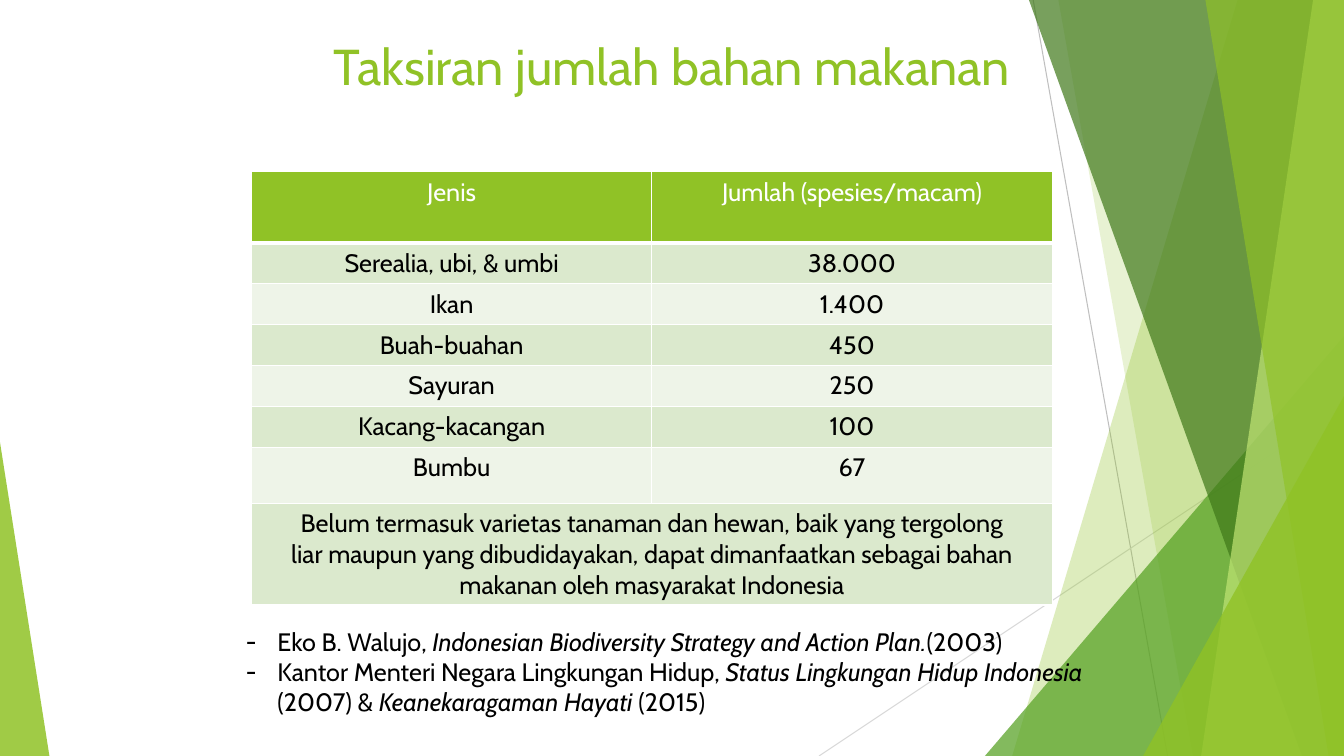
from lxml import etree
from pptx import Presentation
from pptx.dml.color import RGBColor as RGB
from pptx.enum.shapes import MSO_CONNECTOR as LINK, MSO_SHAPE as SHAPE
from pptx.enum.text import PP_ALIGN as ALIGN
from pptx.oxml.ns import qn
from pptx.util import Pt

FONT = "Cabin"
HUES = {
    "lime": "90C226", "green": "54A021", "dark": "3F7819", "pale": "C0E474",
    "gray": "BFBFBF", "mist": "D9D9D9", "white": "FFFFFF", "black": "000000",
    "band": "DBE9CD", "light": "EEF4E8",
}


def tint(shape, hue, alpha):
    """Fill a shape with a see-through colour, without line or shadow."""
    shape.shadow.inherit = False
    shape.line.fill.background()
    shape.fill.solid()
    shape.fill.fore_color.rgb = RGB.from_string(HUES[hue])
    clr = shape._element.spPr.find(qn("a:solidFill"))[0]
    etree.SubElement(clr, qn("a:alpha"), val=str(alpha * 1000))


def style(font, size, hue):
    font.name = FONT
    font.size = Pt(size)
    font.color.rgb = RGB.from_string(HUES[hue])


deck = Presentation()
deck.slide_width, deck.slide_height = Pt(960), Pt(540)
slide = deck.slides.add_slide(deck.slide_layouts[6])
shapes = slide.shapes

# Thin lines behind the facets
for hue, *ends in [("gray", 738, 0, 834, 540), ("mist", 960, 290, 585, 540)]:
    link = shapes.add_connector(LINK.STRAIGHT, *map(Pt, ends))
    link.line.color.rgb = RGB.from_string(HUES[hue])
    link.line.width = Pt(0.75)
    etree.SubElement(link._element.spPr, qn("a:effectLst"))

# Facets: top and bottom x of the slanted edge, or a triangle's
# left, top, width and apex; all reach the bottom of the slide
facets = [
    ("lime", 30, (884, 723)),
    ("lime", 20, (756, 852)),
    ("green", 72, (703.5, 240, 256.5, 1)),
    ("dark", 70, (735, 930)),
    ("pale", 70, (938, 858)),
    ("lime", 65, (861, 949)),
    ("lime", 80, (816.5, 283, 143.5, 1)),
    ("lime", 85, (0, 316, 35.3, 0)),
]
for hue, alpha, dims in facets:
    if len(dims) == 2:
        top, base = dims
        path = shapes.build_freeform(top, 0, scale=12700)
        path.add_line_segments([(960, 0), (960, 540), (base, 540)])
        facet = path.convert_to_shape()
    else:
        left, top, width, apex = dims
        facet = shapes.add_shape(SHAPE.ISOSCELES_TRIANGLE, Pt(left), Pt(top),
                                 Pt(width), Pt(540 - top))
        facet.adjustments[0] = apex
    tint(facet, hue, alpha)

# Title
title = shapes.add_textbox(Pt(120), Pt(21.6), Pt(720), Pt(90)).text_frame
title.word_wrap = True
title.text = "Taksiran jumlah bahan makanan"
title.paragraphs[0].alignment = ALIGN.CENTER
style(title.paragraphs[0].runs[0].font, 36, "lime")

# Table
rows = [
    ("Jenis", "Jumlah (spesies/macam)"),
    ("Serealia, ubi, & umbi", "38.000"),
    ("Ikan", "1.400"),
    ("Buah-buahan", "450"),
    ("Sayuran", "250"),
    ("Kacang-kacangan", "100"),
    ("Bumbu", "67"),
    ("Belum termasuk varietas tanaman dan hewan, baik yang tergolong\n"
     "liar maupun yang dibudidayakan, dapat dimanfaatkan sebagai bahan "
     "makanan oleh masyarakat Indonesia", ""),
]
highs = [50.8] + [29.2] * 5 + [39.9, 72.8]
table = shapes.add_table(len(rows), 2, Pt(179.6), Pt(122.7), Pt(572),
                         Pt(sum(highs))).table
for col in table.columns:
    col.width = Pt(286)
table.cell(7, 0).merge(table.cell(7, 1))
for r, (row, high) in enumerate(zip(rows, highs)):
    table.rows[r].height = Pt(high)
    hue = "lime" if r == 0 else "band" if r % 2 else "light"
    for c, text in enumerate(row):
        cell = table.cell(r, c)
        props = cell._tc.get_or_add_tcPr()
        for side in "LRTB":
            wide = 3 if r == 0 and side == "B" else 1
            edge = etree.SubElement(props, qn("a:ln" + side), w=str(Pt(wide)))
            fill = etree.SubElement(edge, qn("a:solidFill"))
            etree.SubElement(fill, qn("a:srgbClr"), val=HUES["white"])
        cell.fill.solid()
        cell.fill.fore_color.rgb = RGB.from_string(HUES[hue])
        if cell.is_spanned:
            continue
        cell.text_frame.text = text
        for para in cell.text_frame.paragraphs:
            para.alignment = ALIGN.CENTER
            style(para.runs[0].font, 18, "black" if r else "white")

# Sources: plain and italic runs take turns
notes = [
    ["Eko B. Walujo, ", "Indonesian Biodiversity Strategy and Action Plan.",
     "(2003)"],
    ["Kantor Menteri Negara Lingkungan Hidup, ",
     "Status Lingkungan Hidup Indonesia ", "(2007) & ",
     "Keanekaragaman Hayati ", "(2015)"],
]
frame = shapes.add_textbox(Pt(168.5), Pt(443.5), Pt(633), Pt(72.7)).text_frame
frame.word_wrap = True
for n, parts in enumerate(notes):
    para = frame.add_paragraph() if n else frame.paragraphs[0]
    props = para._p.get_or_add_pPr()
    props.set("marL", str(Pt(22.5)))
    props.set("indent", str(-Pt(22.5)))
    etree.SubElement(props, qn("a:buFont"), typeface=FONT)
    etree.SubElement(props, qn("a:buChar"), char="-")
    for i, part in enumerate(parts):
        run = para.add_run()
        run.text = part
        style(run.font, 18, "black")
        run.font.italic = i % 2 == 1

deck.save("out.pptx")
